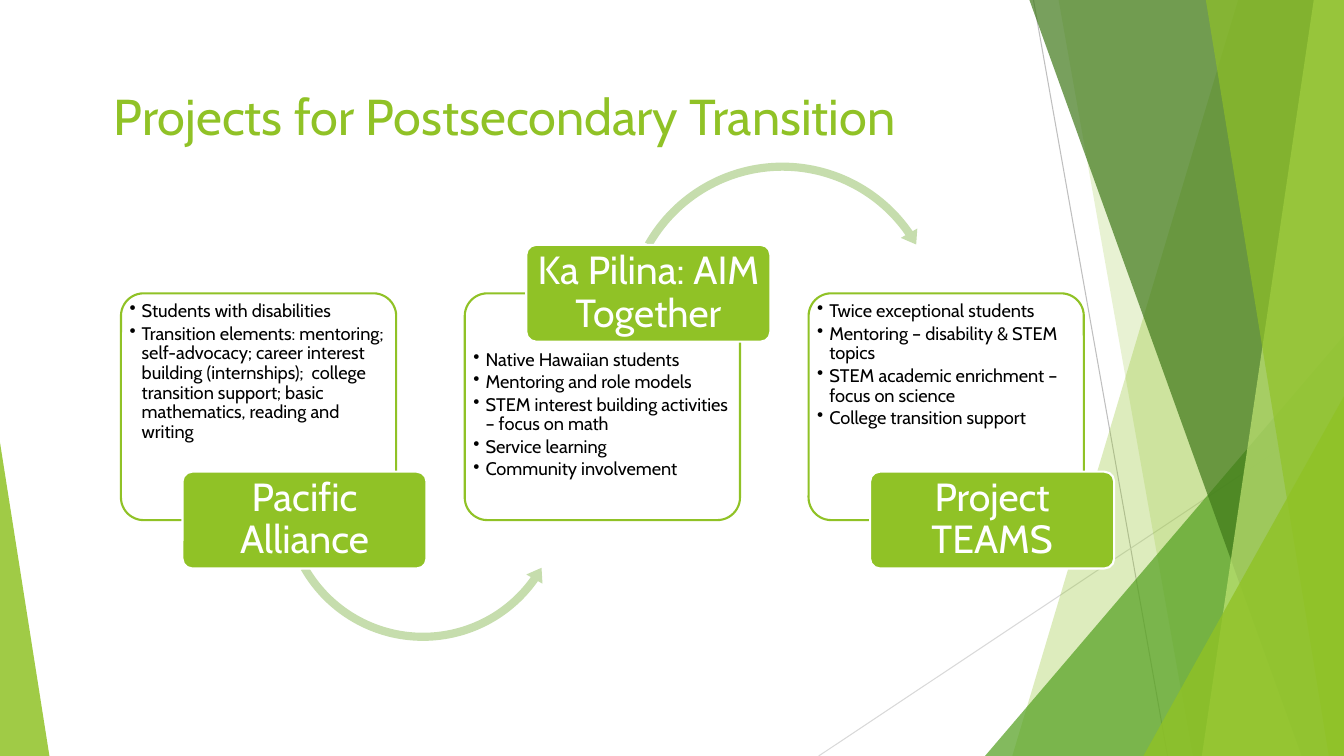
from lxml import etree
from pptx import Presentation
from pptx.dml.color import RGBColor
from pptx.enum import shapes, text
from pptx.oxml.ns import qn
from pptx.util import Inches, Pt

FONT = "Cabin"
GREEN = "90C226"
MSO = shapes.MSO_SHAPE


def paint(fill, color, alpha=100):
    """Solid fill for a shape, line or font; alpha is the opacity in percent."""
    fill.solid()
    fill.fore_color.rgb = RGBColor.from_string(color)
    if alpha < 100:
        clr = fill._xPr.find(qn("a:solidFill"))[0]
        etree.SubElement(clr, qn("a:alpha")).set("val", str(alpha * 1000))


def write(sp, lines, size, color, margins, bullets=False):
    """Fill a shape with paragraphs; margins are left, top, right, bottom."""
    tf = sp.text_frame
    tf.word_wrap = True
    tf.auto_size = text.MSO_AUTO_SIZE.NONE
    tf.margin_left, tf.margin_top, tf.margin_right, tf.margin_bottom = map(Inches, margins)
    tf.vertical_anchor = text.MSO_ANCHOR.TOP if bullets else text.MSO_ANCHOR.MIDDLE
    tf.text = "\n".join(lines)
    for p in tf.paragraphs:
        p.alignment = text.PP_ALIGN.LEFT if bullets else text.PP_ALIGN.CENTER
        p.line_spacing = 0.9
        if bullets:
            p.space_after = Pt(2)
            pPr = p._p.get_or_add_pPr()
            pPr.set("marL", str(Inches(0.12)))
            pPr.set("indent", str(-Inches(0.12)))
            etree.SubElement(pPr, qn("a:buChar")).set("char", "•")
        for r in p.runs:
            r.font.name, r.font.size = FONT, Pt(size)
            paint(r.font.fill, color)


prs = Presentation()
prs.slide_width, prs.slide_height = Inches(13.33), Inches(7.5)
s = prs.slides.add_slide(prs.slide_layouts[5])

# Title
title = s.shapes.title
title.left, title.top, title.width, title.height = map(Inches, (1.03, 0.79, 9.4, 1.44))
tf = title.text_frame
tf.text = "Projects for Postsecondary Transition"
tf.auto_size = text.MSO_AUTO_SIZE.NONE
tf.vertical_anchor = text.MSO_ANCHOR.TOP
p = tf.paragraphs[0]
p.alignment = text.PP_ALIGN.LEFT
r = p.runs[0]
r.font.name, r.font.size = FONT, Pt(36)
paint(r.font.fill, GREEN)

# Background lines
for x1, y1, x2, y2, color in [(10.25, 0, 11.58, 7.5, "BFBFBF"),
                              (13.33, 4.03, 8.12, 7.5, "D9D9D9")]:
    ln = s.shapes.add_connector(shapes.MSO_CONNECTOR.STRAIGHT,
                                *map(Inches, (x1, y1, x2, y2)))
    paint(ln.line.fill, color)
    ln.line.width = Pt(0.75)
    etree.SubElement(ln._element.spPr, qn("a:effectLst"))

# Background facets: bands (top x, bottom x, up to the right edge) and
# triangles (left, top, width, apex position), from back to front
facets = [
    ("band", (12.28, 10.04), GREEN, 30),
    ("band", (10.5, 11.83), GREEN, 20),
    ("triangle", (9.77, 3.33, 3.56, 1), "54A021", 72),
    ("band", (10.21, 12.91), "3F7819", 70),
    ("band", (13.03, 11.92), "C0E474", 70),
    ("band", (11.96, 13.18), GREEN, 65),
    ("triangle", (11.34, 3.93, 1.99, 1), GREEN, 80),
    ("triangle", (0, 4.39, 0.49, 0), GREEN, 85),
]
for kind, dims, color, alpha in facets:
    if kind == "band":
        top_x, bottom_x = map(Inches, dims)
        right, bottom = prs.slide_width, prs.slide_height
        fb = s.shapes.build_freeform(top_x, 0)
        fb.add_line_segments([(right, 0), (right, bottom), (bottom_x, bottom)])
        sp = fb.convert_to_shape()
    else:
        left, top, width, apex = dims
        sp = s.shapes.add_shape(MSO.ISOSCELES_TRIANGLE,
                                *map(Inches, (left, top, width, 7.5 - top)))
        sp.adjustments[0] = apex
    sp.shadow.inherit = False
    paint(sp.fill, color, alpha)
    sp.line.fill.background()

# Projects: name, label top, text top margin, bullets, arrow to the next project
projects = [
    ("Pacific Alliance", 4.68, 0.02,
     ["Students with disabilities",
      "Transition elements: mentoring; self-advocacy; career interest building "
      "(internships);  college transition support; basic mathematics, reading and writing"],
     (MSO.LEFT_CIRCULAR_ARROW, 2.75, 3.52, 2.89, (0.028, 3.374, 21.129, 90.245, 0.032))),
    ("Ka Pilina: AIM Together", 2.43, 0.5,
     ["Native Hawaiian students",
      "Mentoring and role models",
      "STEM interest building activities – focus on math",
      "Service learning",
      "Community involvement"],
     (MSO.CIRCULAR_ARROW, 6.14, 1.56, 3.24, (0.025, 2.99, 195.254, 125.755, 0.029))),
    ("Project TEAMS", 4.68, 0.02,
     ["Twice exceptional students",
      "Mentoring – disability & STEM topics",
      "STEM academic enrichment – focus on science",
      "College transition support"],
     None),
]
for i, (name, label_top, text_top, lines, arrow) in enumerate(projects):
    left = 1.2 + 3.41 * i
    box = s.shapes.add_shape(MSO.ROUNDED_RECTANGLE, *map(Inches, (left, 2.91, 2.73, 2.25)))
    paint(box.fill, "FFFFFF", 90)
    paint(box.line.fill, GREEN)
    write(box, lines, 13, "000000", (0.02, text_top, 0.02, 0.02), bullets=True)

    if arrow:
        shape_type, x, y, size, adjustments = arrow
        arc = s.shapes.add_shape(shape_type, *map(Inches, (x, y, size, size)))
        arc.shadow.inherit = False
        for j, value in enumerate(adjustments):
            arc.adjustments[j] = value
        paint(arc.fill, "C6DDAD")
        arc.line.fill.background()

    label = s.shapes.add_shape(MSO.ROUNDED_RECTANGLE,
                               *map(Inches, (left + 0.61, label_top, 2.42, 0.96)))
    paint(label.fill, GREEN)
    paint(label.line.fill, "FFFFFF")
    write(label, [name], 28, "FFFFFF", (0.05, 0.04, 0.05, 0.04))

    for sp in (box, label):
        sp.shadow.inherit = False
        sp.adjustments[0] = 0.1
        sp.line.width = Pt(1.5)

prs.save("out.pptx")
